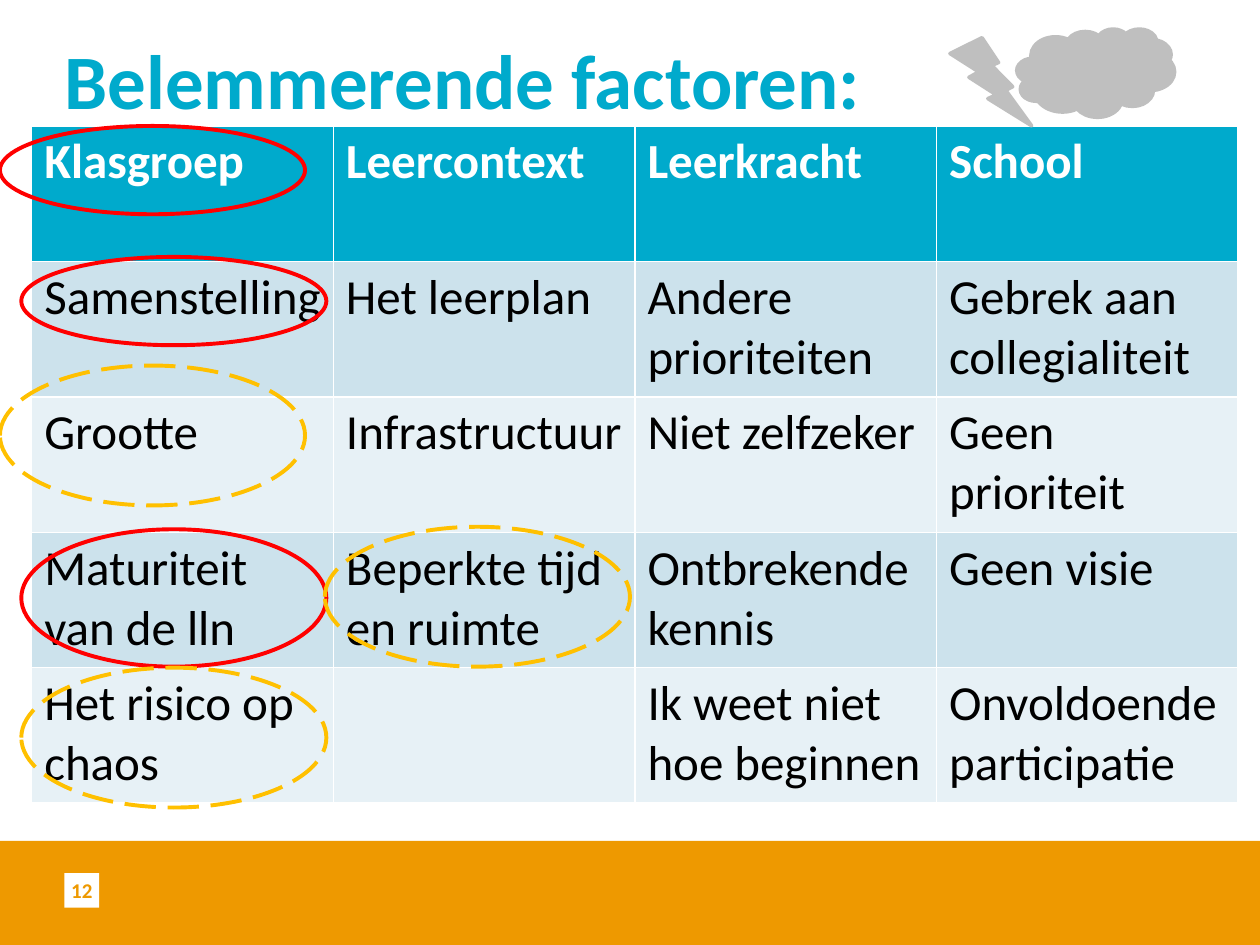
from pptx import Presentation
from pptx.dml.color import RGBColor
from pptx.enum import dml, shapes, text
from pptx.util import Cm, Pt

FONT = "Calibri"
WHITE = RGBColor(0xFF, 0xFF, 0xFF)
BLACK = RGBColor(0, 0, 0)
BLUE = RGBColor(0x00, 0xAA, 0xCC)
ORANGE = RGBColor(0xEE, 0x99, 0x00)
BAND_DARK = RGBColor(0xCC, 0xE2, 0xEC)
BAND_LIGHT = RGBColor(0xE7, 0xF1, 0xF6)
GREY = RGBColor(0xBF, 0xBF, 0xBF)
RED = RGBColor(0xFF, 0, 0)
AMBER = RGBColor(0xFF, 0xC0, 0)

TITLE = "Belemmerende factoren:"
PAGE_NUMBER = "12"
FACTORS = [
    ("Klasgroep", "Leercontext", "Leerkracht", "School"),
    ("Samenstelling", "Het leerplan", "Andere prioriteiten", "Gebrek aan collegialiteit"),
    ("Grootte", "Infrastructuur", "Niet zelfzeker", "Geen prioriteit"),
    ("Maturiteit van de lln", "Beperkte tijd en ruimte", "Ontbrekende kennis", "Geen visie"),
    ("Het risico op chaos", "", "Ik weet niet hoe beginnen", "Onvoldoende participatie"),
]
RING_WIDTH = 6.15
RED_RINGS = [(0, 2.54, 1.78), (0.43, 5.18, 1.78), (0.43, 10.67, 2.77)]
AMBER_RINGS = [(6.55, 10.62, 2.82), (0, 7.37, 2.82), (0.43, 13.46, 2.82)]
WEATHER = [
    (shapes.MSO_SHAPE.LIGHTNING_BOLT, (19.15, 0.76, 1.65, 1.78)),
    (shapes.MSO_SHAPE.CLOUD, (20.5, 0.58, 3.18, 1.78)),
]
COLUMN_WIDTH, ROW_HEIGHT = 6.08, 2.73

deck = Presentation()
deck.slide_width, deck.slide_height = Cm(25.4), Cm(19.05)
slide = deck.slides.add_slide(deck.slide_layouts[5])


def write(paragraph, wording, size, color, bold):
    run = paragraph.add_run()
    run.text = wording
    run.font.name = FONT
    run.font.size = Pt(size)
    run.font.bold = bold
    run.font.color.rgb = color


def draw(kind, box, fill=None, line=None, width=2.25, dash=None):
    shape = slide.shapes.add_shape(kind, *map(Cm, box))
    shape.shadow.inherit = False
    if fill is None:
        shape.fill.background()
    else:
        shape.fill.solid()
        shape.fill.fore_color.rgb = fill
    if line is None:
        shape.line.fill.background()
    else:
        shape.line.color.rgb = line
        shape.line.width = Pt(width)
    if dash is not None:
        shape.line.dash_style = dash
    return shape


def set_margins(frame, margin):
    frame.margin_left = frame.margin_right = Cm(margin)
    frame.margin_top = frame.margin_bottom = Cm(margin)


draw(shapes.MSO_SHAPE.RECTANGLE, (0, 16.95, 25.4, 2.1), ORANGE)
page_box = draw(shapes.MSO_SHAPE.RECTANGLE, (1.3, 17.6, 0.7, 0.7), WHITE).text_frame
set_margins(page_box, 0.1)
page_box.word_wrap = False
page_box.vertical_anchor = text.MSO_ANCHOR.MIDDLE
page_box.paragraphs[0].alignment = text.PP_ALIGN.CENTER
write(page_box.paragraphs[0], PAGE_NUMBER, 12, ORANGE, True)

title = slide.shapes.title
title.left, title.top, title.width, title.height = map(Cm, (1.3, 0.76, 22.8, 1.78))
heading = title.text_frame
set_margins(heading, 0)
heading.word_wrap = True
heading.auto_size = text.MSO_AUTO_SIZE.NONE
heading.vertical_anchor = text.MSO_ANCHOR.BOTTOM
heading.paragraphs[0].alignment = text.PP_ALIGN.LEFT
heading.paragraphs[0].line_spacing = 0.9
write(heading.paragraphs[0], TITLE, 44, BLUE, True)

row_count, column_count = len(FACTORS), len(FACTORS[0])
table = slide.shapes.add_table(
    row_count, column_count, Cm(0.64), Cm(2.54),
    Cm(column_count * COLUMN_WIDTH), Cm(row_count * ROW_HEIGHT),
).table
for column in table.columns:
    column.width = Cm(COLUMN_WIDTH)
for r, factors in enumerate(FACTORS):
    table.rows[r].height = Cm(ROW_HEIGHT)
    header = r == 0
    band = BLUE if header else BAND_DARK if r % 2 else BAND_LIGHT
    for c, factor in enumerate(factors):
        cell = table.cell(r, c)
        cell.fill.solid()
        cell.fill.fore_color.rgb = band
        if factor:
            write(cell.text_frame.paragraphs[0], factor, 28, WHITE if header else BLACK, header)

for left, top, height in RED_RINGS:
    draw(shapes.MSO_SHAPE.OVAL, (left, top, RING_WIDTH, height), line=RED)
for kind, box in WEATHER:
    draw(kind, box, GREY, GREY, 2)
for left, top, height in AMBER_RINGS:
    draw(shapes.MSO_SHAPE.OVAL, (left, top, RING_WIDTH, height), line=AMBER,
         dash=dml.MSO_LINE.LONG_DASH)

deck.save("out.pptx")
